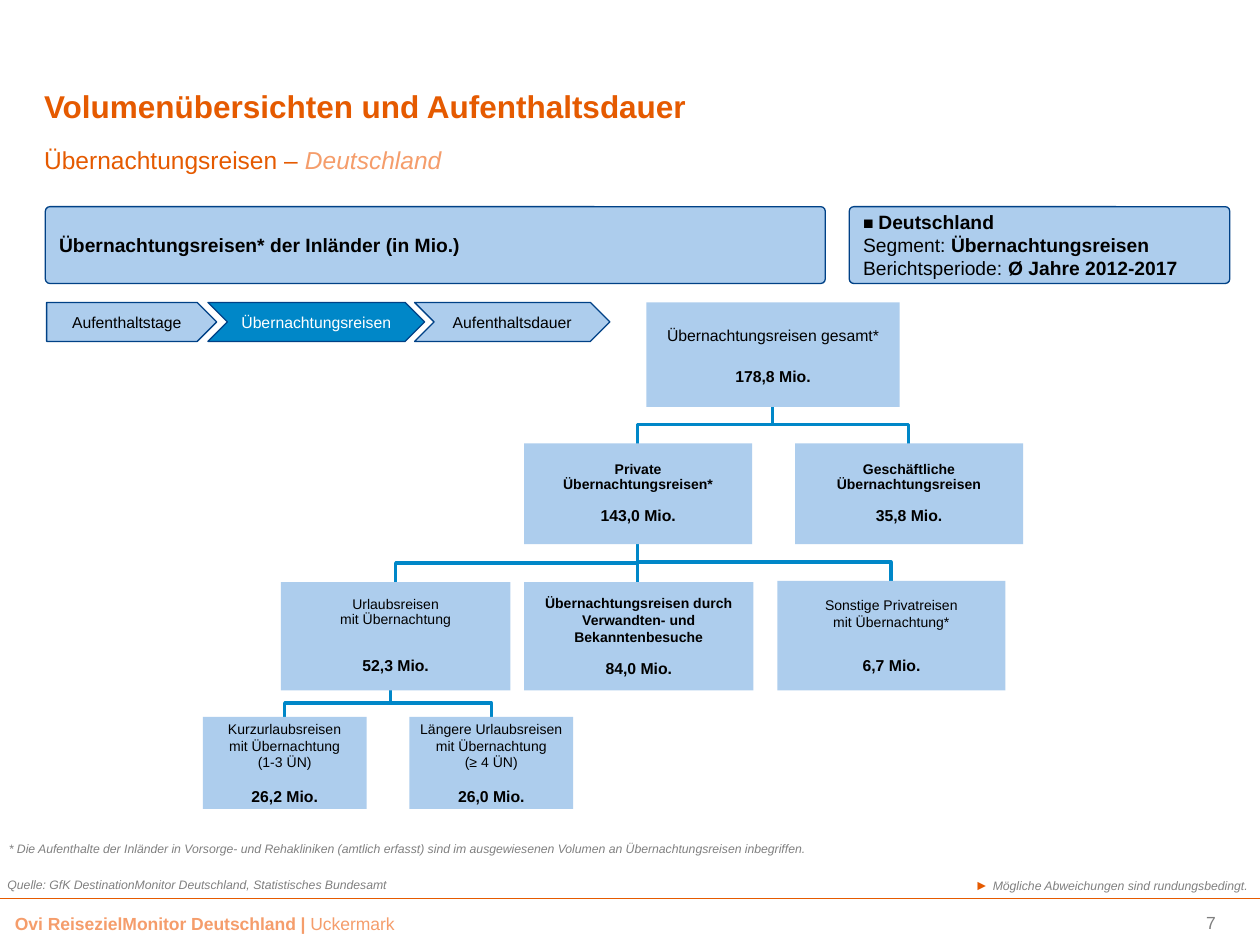
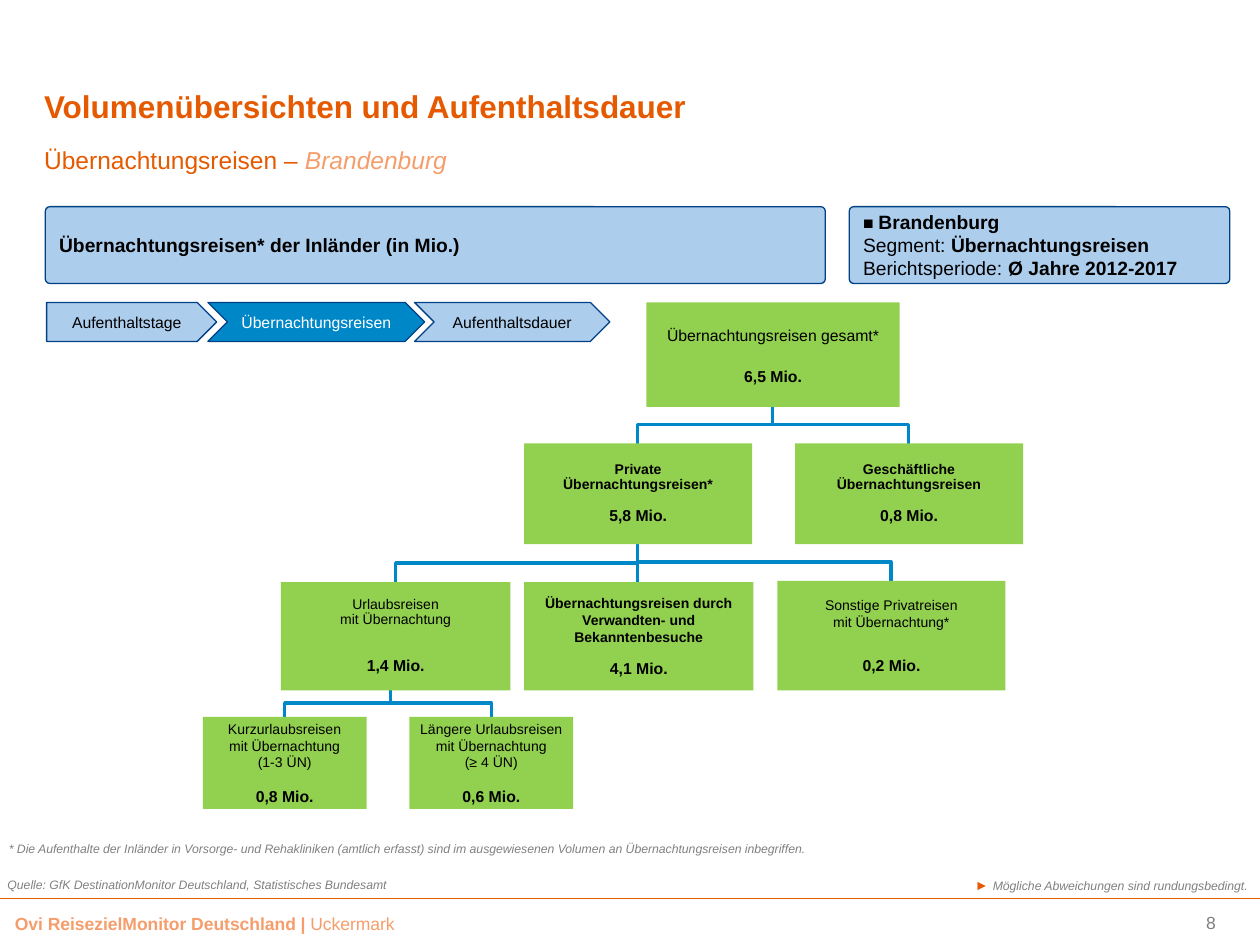
from pptx import Presentation
from pptx.dml.color import RGBColor
from pptx.enum.shapes import MSO_CONNECTOR, MSO_SHAPE
from pptx.enum.text import MSO_ANCHOR, MSO_AUTO_SIZE, PP_ALIGN
from pptx.oxml.ns import qn
from pptx.util import Pt
from lxml.etree import SubElement

PX = 9144
FONT = "Arial"
COLORS = {
    "orange": "E55A00", "peach": "F59D6B", "sky": "ADCDED", "green": "92D050",
    "blue": "0087C8", "navy": "004186", "black": "000000", "white": "FFFFFF",
    "gray": "808080", "number": "7F7F7F",
}
CENTER = {"alignment": PP_ALIGN.CENTER}
RIGHT = {"alignment": PP_ALIGN.RIGHT}
NOTE = {"size": 7, "color": "gray", "italic": True}
BOLD = {"size": 11, "bold": True}
PLAIN = {"size": 11}

NODES = {
    "total": (513, 240, 201, 83, "Übernachtungsreisen gesamt*", 9, False, 1.14, 11),
    "private": (416, 352, 181, 80, "Private\nÜbernachtungsreisen*", 8, True, 0.9, 9),
    "business": (631, 352, 181, 80, "Geschäftliche\nÜbernachtungsreisen", 8, True, 0.9, 9),
    "holiday": (223, 462, 182, 86, "Urlaubsreisen\nmit Übernachtung", 8, False, 0.9, 17),
    "visits": (416, 462, 182, 86,
               "Übernachtungsreisen durch Verwandten- und Bekanntenbesuche", 8, True, 1.0, 8),
    "other": (617, 461, 181, 87, "Sonstige Privatreisen\nmit Übernachtung*", 8, False, 1.0, 15),
    "short": (161, 569, 130, 73, "Kurzurlaubsreisen\nmit Übernachtung\n(1-3 ÜN)", 8, False, 1.0, 9),
    "long": (325, 569, 130, 73, "Längere Urlaubsreisen\nmit Übernachtung\n(≥ 4 ÜN)", 8, False, 1.0, 9),
}
BRANCHES = [
    ("total", 0, ["private", "business"]),
    ("private", 0, ["holiday", "visits", "other"]),
    ("holiday", -4, ["short", "long"]),
]
STEPS = [
    (MSO_SHAPE.PENTAGON, 37, 135, "Aufenthaltstage", "sky", "black"),
    (MSO_SHAPE.CHEVRON, 165, 172, "Übernachtungsreisen", "blue", "white"),
    (MSO_SHAPE.CHEVRON, 329, 155, "Aufenthaltsdauer", "sky", "black"),
]
REGIONS = [
    (7, "Deutschland", "sky",
     ["178,8", "143,0", "35,8", "52,3", "84,0", "6,7", "26,2", "26,0"]),
    (8, "Brandenburg", "green",
     ["6,5", "5,8", "0,8", "1,4", "4,1", "0,2", "0,8", "0,6"]),
]


def rgb(name):
    return RGBColor.from_string(COLORS[name])


class Deck:
    def __init__(self):
        self.prs = Presentation()
        self.prs.slide_width = 1000 * PX
        self.prs.slide_height = 750 * PX
        self.s = None

    def new_slide(self):
        self.s = self.prs.slides.add_slide(self.prs.slide_layouts[1])

    def fill_text(self, sp, paras, inset=(10, 5), anchor=MSO_ANCHOR.TOP):
        tf = sp.text_frame
        dx, dy = (n * PX for n in inset)
        frame = {"word_wrap": True, "auto_size": MSO_AUTO_SIZE.NONE,
                 "vertical_anchor": anchor, "margin_left": dx, "margin_right": dx,
                 "margin_top": dy, "margin_bottom": dy}
        for key, value in frame.items():
            setattr(tf, key, value)
        for i, (runs, look) in enumerate(paras):
            p = tf.add_paragraph() if i else tf.paragraphs[0]
            base = {"alignment": PP_ALIGN.LEFT, "space_before": Pt(0), "space_after": Pt(0)}
            for key, value in {**base, **look}.items():
                setattr(p, key, value)
            for text, style in runs:
                self.add_text(p, text, style)

    def add_text(self, p, text, style):
        for i, line in enumerate(text.split("\n")):
            if i:
                p.add_line_break()
            r = p.add_run()
            r.text = line
            look = {"name": FONT, "size": Pt(style["size"]),
                    "bold": style.get("bold", False), "italic": style.get("italic", False)}
            for key, value in look.items():
                setattr(r.font, key, value)
            r.font.color.rgb = rgb(style.get("color", "black"))

    def placeholder(self, idx, box, runs, anchor):
        sp = self.s.placeholders[idx]
        sp.left, sp.top, sp.width, sp.height = (n * PX for n in box)
        pPr = sp.text_frame.paragraphs[0]._p.get_or_add_pPr()
        pPr.set("marL", "0")
        pPr.set("indent", "0")
        SubElement(pPr, qn("a:buNone"))
        self.fill_text(sp, [(runs, {})], (0, 0), anchor)

    def text(self, box, runs, look=None, **frame):
        sp = self.s.shapes.add_textbox(*(n * PX for n in box))
        self.fill_text(sp, [(runs, look or {})], **frame)

    def shape(self, kind, box, fill, paras, line=None, radius=None, **frame):
        sp = self.s.shapes.add_shape(kind, *(n * PX for n in box))
        sp.shadow.inherit = False
        sp.fill.solid()
        sp.fill.fore_color.rgb = rgb(fill)
        if line:
            sp.line.color.rgb = rgb(line)
            sp.line.width = Pt(0.75)
        else:
            sp.line.fill.background()
        if radius:
            sp.adjustments[0] = radius
        self.fill_text(sp, paras, anchor=MSO_ANCHOR.MIDDLE, **frame)

    def line(self, x1, y1, x2, y2, color, width):
        sp = self.s.shapes.add_connector(
            MSO_CONNECTOR.STRAIGHT, *(n * PX for n in (x1, y1, x2, y2)))
        SubElement(sp._element.spPr, qn("a:effectLst"))
        sp.line.color.rgb = rgb(color)
        sp.line.width = Pt(width)

    def elbow(self, x1, y1, x2, y2):
        if abs(x1 - x2) < 2:
            self.line(x1, y1, x1, y2, "blue", 2)
            return
        mid = (y1 + y2) // 2
        outline = self.s.shapes.build_freeform(x1, y1, scale=PX)
        outline.add_line_segments([(x1, mid), (x2, mid), (x2, y2)], close=False)
        sp = outline.convert_to_shape()
        sp.shadow.inherit = False
        sp.fill.background()
        sp.line.color.rgb = rgb("blue")
        sp.line.width = Pt(2)

    def banner(self, x, w, paras):
        self.shape(MSO_SHAPE.ROUNDED_RECTANGLE, (x, 164, w, 61), "sky", paras,
                   line="navy", radius=0.06)

    def header(self, region):
        self.placeholder(0, (35, 28, 693, 71), [
            ("Volumenübersichten und Aufenthaltsdauer",
             {"size": 18, "color": "orange", "bold": True})], MSO_ANCHOR.BOTTOM)
        self.placeholder(1, (35, 115, 929, 31), [
            ("Übernachtungsreisen – ", {"size": 14, "color": "orange"}),
            (region, {"size": 14, "color": "peach", "italic": True})], MSO_ANCHOR.TOP)
        self.banner(36, 619, [([("Übernachtungsreisen* der Inländer (in Mio.)", BOLD)], {})])
        self.banner(674, 302, [
            ([("■ ", {"size": 10, "bold": True}), (region, BOLD)], {}),
            ([("Segment:", PLAIN), (" Übernachtungsreisen", BOLD)], {}),
            ([("Berichtsperiode: ", PLAIN), ("Ø Jahre 2012-2017", BOLD)], {})])

    def steps(self):
        for kind, x, w, label, fill, color in STEPS:
            self.shape(kind, (x, 240, w, 31), fill,
                       [([(label, {"size": 9, "color": color})], CENTER)],
                       line="navy", inset=(0, 0))

    def tree(self, fill, values):
        for parent, shift, children in BRANCHES:
            x, y, w, h = NODES[parent][:4]
            for child in children:
                cx, cy, cw = NODES[child][:3]
                self.elbow(x + w // 2 + shift, y + h, cx + cw // 2, cy)
        for node, value in zip(NODES.values(), values):
            *box, label, size, bold, spacing, gap = node
            look = {**CENTER, "line_spacing": spacing}
            self.shape(MSO_SHAPE.RECTANGLE, box, fill, [
                ([(label, {"size": size, "bold": bold})], look),
                ([(f"{value} Mio.", {"size": 9, "bold": True})],
                 {**look, "space_before": Pt(gap)})], inset=(3, 3))

    def footer(self, number):
        self.text((0, 663, 905, 27), [
            ("* Die Aufenthalte der Inländer in Vorsorge- und Rehakliniken (amtlich erfasst) "
             "sind im ausgewiesenen Volumen an Übernachtungsreisen inbegriffen.", NOTE)],
            inset=(7, 5))
        self.text((0, 691, 476, 21), [
            ("Quelle: GfK DestinationMonitor Deutschland, Statistisches Bundesamt", NOTE)],
            inset=(6, 5))
        self.text((658, 691, 342, 21), [
            ("► ", {"size": 8, "color": "orange"}),
            ("Mögliche Abweichungen sind rundungsbedingt.", NOTE)], RIGHT)
        self.line(0, 713, 1000, 713, "orange", 0.55)
        brand = {"size": 10, "color": "peach"}
        self.text((2, 720, 673, 27), [
            ("Ovi ReisezielMonitor Deutschland | ", {**brand, "bold": True}),
            ("Uckermark", brand)])
        self.text((823, 724, 142, 16), [(str(number), {"size": 10, "color": "number"})],
                  RIGHT, inset=(0, 0), anchor=MSO_ANCHOR.MIDDLE)


def main():
    deck = Deck()
    for number, region, fill, values in REGIONS:
        deck.new_slide()
        deck.header(region)
        deck.steps()
        deck.tree(fill, values)
        deck.footer(number)
    deck.prs.save("out.pptx")


if __name__ == "__main__":
    main()
